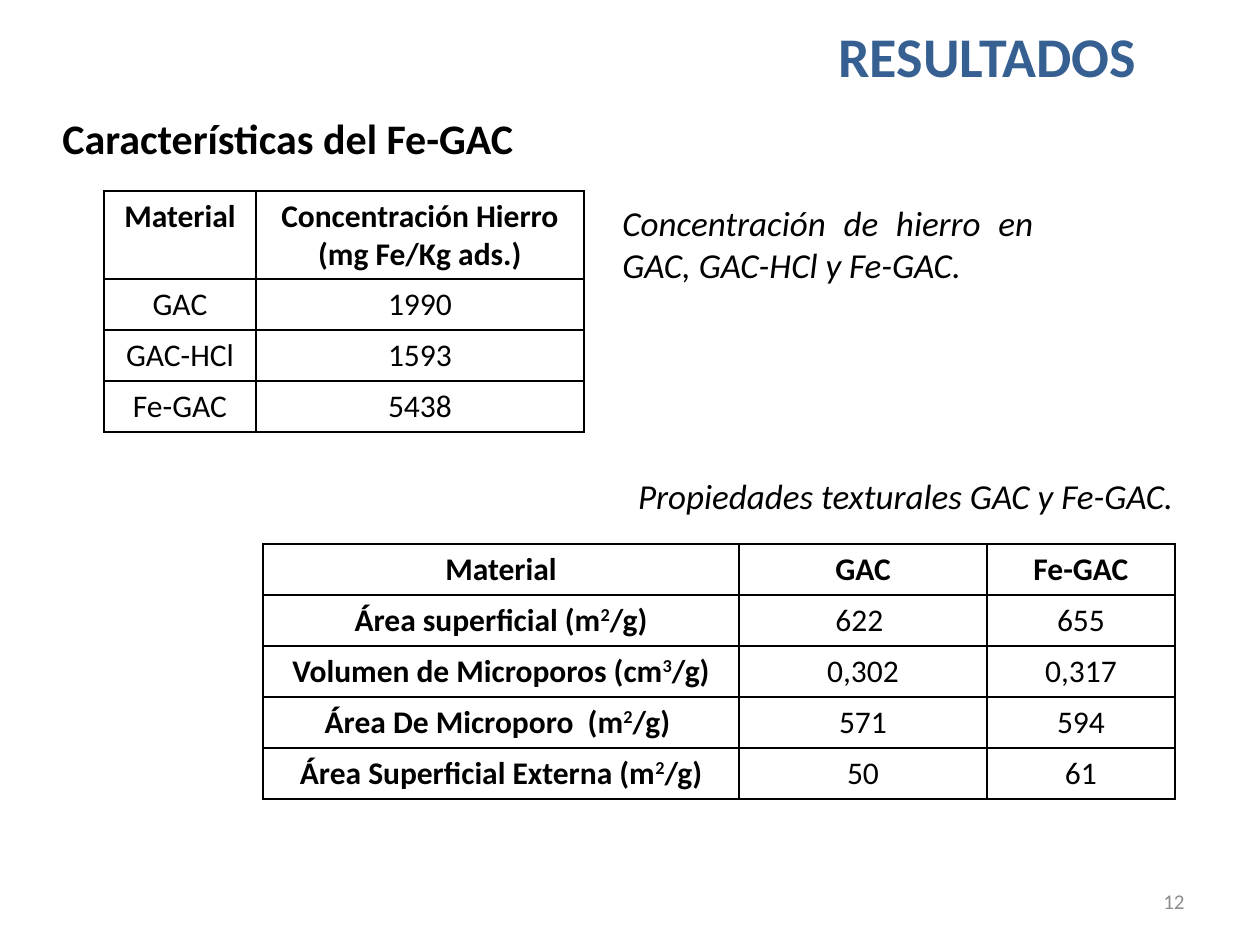
from lxml import etree
from pptx import Presentation
from pptx.dml.color import RGBColor
from pptx.enum.text import MSO_ANCHOR, PP_ALIGN
from pptx.oxml.ns import qn
from pptx.util import Pt

LEFT, CENTER, RIGHT, JUSTIFY = PP_ALIGN.LEFT, PP_ALIGN.CENTER, PP_ALIGN.RIGHT, PP_ALIGN.JUSTIFY
TOP, MIDDLE = MSO_ANCHOR.TOP, MSO_ANCHOR.MIDDLE
PX = 914400 // 126
COLORS = {"title": "376092", "text": "000000", "number": "8C8C8C", "border": "000000"}


def write_text(frame, text, size=18, color="text", bold=False, italic=False, align=LEFT, anchor=TOP):
    frame.word_wrap = True
    frame.vertical_anchor = anchor
    para = frame.paragraphs[0]
    para.alignment = align
    for index, part in enumerate(text.split("^")):
        span = para.add_run()
        span.text = part
        span.font.name = "Calibri"
        span.font.size = Pt(size)
        span.font.bold = bold
        span.font.italic = italic
        span.font.color.rgb = RGBColor.from_string(COLORS[color])
        if index % 2:
            span.font._element.set("baseline", "30000")


def add_borders(cell):
    properties = cell._tc.get_or_add_tcPr()
    for side in ("lnL", "lnR", "lnT", "lnB"):
        line = etree.SubElement(properties, qn(f"a:{side}"), w=str(Pt(1)))
        fill = etree.SubElement(line, qn("a:solidFill"))
        etree.SubElement(fill, qn("a:srgbClr"), val=COLORS["border"])


deck = Presentation()
deck.slide_width = 1260 * PX
deck.slide_height = 945 * PX
page = deck.slides.add_slide(deck.slide_layouts[6])

texts = [
    ("RESULTADOS", (809, 15, 357, 81), dict(size=32, color="title", bold=True, align=CENTER)),
    ("Características del Fe-GAC", (50, 106, 1115, 63), dict(size=24, bold=True)),
    ("Concentración de hierro en GAC, GAC-HCl y Fe-GAC.", (610, 195, 436, 97),
     dict(size=20, italic=True, align=JUSTIFY)),
    ("Propiedades texturales GAC y Fe-GAC.", (571, 468, 615, 55),
     dict(size=20, italic=True, align=RIGHT)),
    ("12", (903, 876, 294, 50), dict(size=12, color="number", align=RIGHT, anchor=MIDDLE)),
]
for text, place, style in texts:
    box = page.shapes.add_textbox(*[length * PX for length in place])
    write_text(box.text_frame, text, **style)

iron_rows = [
    ("Material", "Concentración Hierro (mg Fe/Kg ads.)"),
    ("GAC", "1990"),
    ("GAC-HCl", "1593"),
    ("Fe-GAC", "5438"),
]
texture_rows = [
    ("Material", "GAC", "Fe-GAC"),
    ("Área superficial (m^2^/g)", "622 ", "655"),
    ("Volumen de Microporos (cm^3^/g)", "0,302", "0,317"),
    ("Área De Microporo  (m^2^/g) ", "571", "594"),
    ("Área Superficial Externa (m^2^/g)", "50", "61"),
]
tables = [
    (iron_rows, 104, 191, (152, 328), 88, False),
    (texture_rows, 263, 544, (476, 248, 188), 51, True),
]
for rows, left, top, widths, header_height, bold_labels in tables:
    heights = [header_height] + [51] * (len(rows) - 1)
    frame = page.shapes.add_table(len(rows), len(widths), left * PX, top * PX,
                                  sum(widths) * PX, sum(heights) * PX)
    table = frame.table
    table.first_row = False
    table.horz_banding = False
    for column, width in zip(table.columns, widths):
        column.width = width * PX
    for row_index, values in enumerate(rows):
        table.rows[row_index].height = heights[row_index] * PX
        for column_index, value in enumerate(values):
            cell = table.cell(row_index, column_index)
            add_borders(cell)
            cell.fill.background()
            bold = row_index == 0 or (bold_labels and column_index == 0)
            write_text(cell.text_frame, value, bold=bold, align=CENTER)

deck.save("out.pptx")
